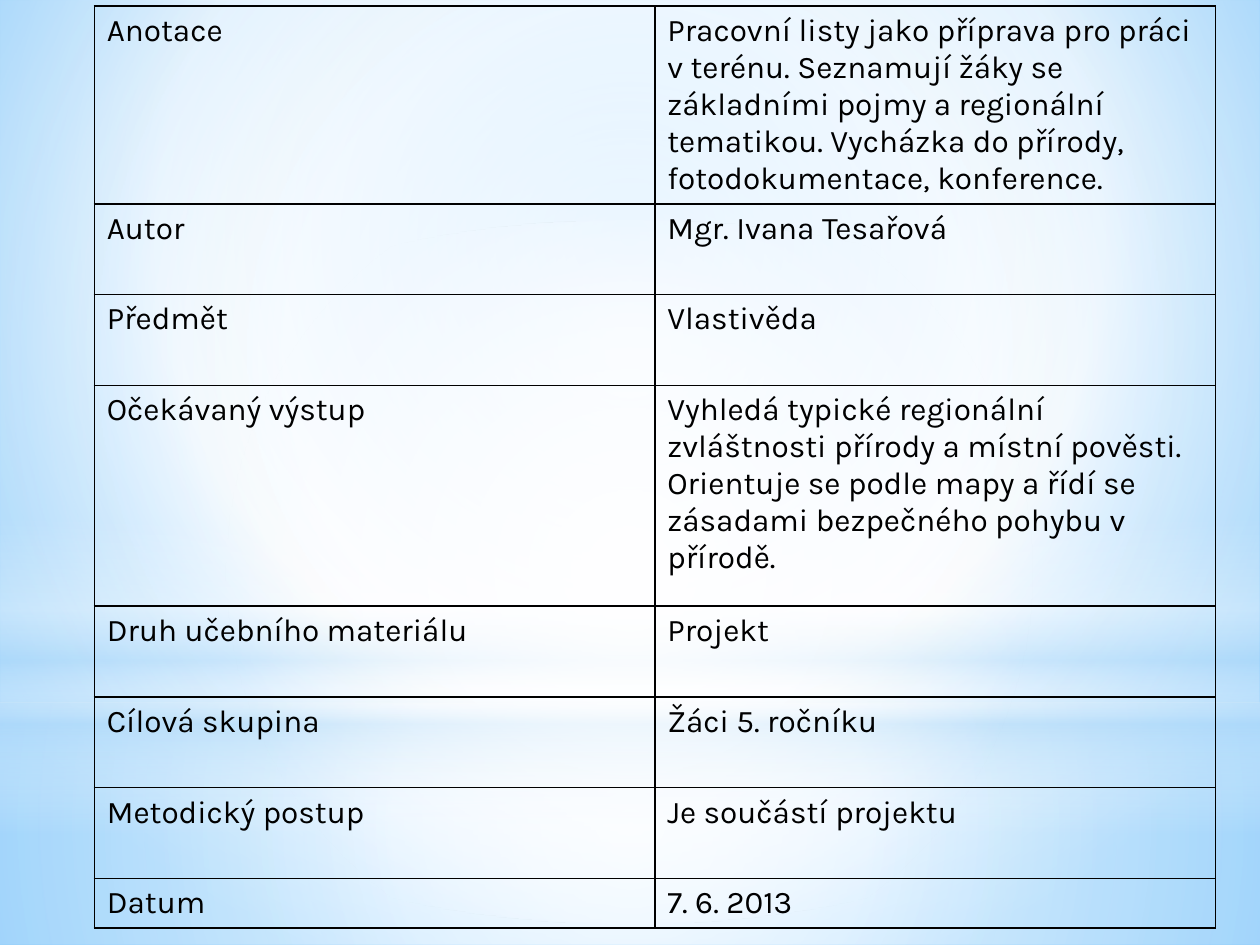
from lxml import etree
from pptx import Presentation
from pptx.dml.color import RGBColor
from pptx.enum.shapes import MSO_SHAPE
from pptx.oxml.ns import qn
from pptx.util import Cm, Pt

RECT, OVAL = MSO_SHAPE.RECTANGLE, MSO_SHAPE.OVAL
WIDE, HIGH = 25.4, 19.05
FONT, INK = "Karla", "000000"
MID = (50, 50, 50, 50)
ROWS = [
    (3.99, "Anotace", "Pracovní listy jako příprava pro práci v terénu. Seznamují žáky se "
     "základními pojmy a regionální tematikou. Vycházka do přírody, fotodokumentace, konference."),
    (1.83, "Autor", "Mgr. Ivana Tesařová"),
    (1.83, "Předmět", "Vlastivěda"),
    (4.45, "Očekávaný výstup", "Vyhledá typické regionální zvláštnosti přírody a místní pověsti. "
     "Orientuje se podle mapy a řídí se zásadami bezpečného pohybu v přírodě."),
    (1.83, "Druh učebního materiálu", "Projekt"),
    (1.83, "Cílová skupina", "Žáci 5. ročníku"),
    (1.83, "Metodický postup", "Je součástí projektu"),
    (1, "Datum", "7. 6. 2013"),
]
GLOWS = [
    (RECT, 14.17, 4.88, [(0, "FFFFFF", 91), (37, "FFFFFF", 76), (100, "B4DCFA", 79)], MID),
    (RECT, 0, 14.17, [(0, "FFFFFF", 89), (48, "FFFFFF", 62), (100, "B4DCFA", 79)], MID),
    (RECT, 10.46, 6.35, [(0, "FFFFFF", 0), (29, "FFFFFF", 30), (45, "B4DCFA", 40),
                         (55, "FFFFFF", 26), (65, "B4DCFA", 60), (100, "FFFFFF", 0)], None),
    (OVAL, 4.45, 14.17, [(0, "FFFFFF", 100), (56, "FFFFFF", 0)], MID),
]
SKY = [(0, "9ED5FF", 100), (60, "FFFFFF", 100), (100, "5BB9FF", 100)]


def rgb(code):
    """Turn a hex string into a colour."""
    return RGBColor.from_string(code)


def add(root, tag, **attrs):
    """Append a child element with the given attributes."""
    return etree.SubElement(root, qn(tag), {key: str(val) for key, val in attrs.items()})


def blend(root, stops, focus):
    """Swap a solid fill for a round gradient, or a vertical one without focus."""
    grad = etree.Element(qn("a:gradFill"), rotWithShape="1")
    items = add(grad, "a:gsLst")
    for pos, code, alpha in stops:
        tint = add(add(items, "a:gs", pos=pos * 1000), "a:srgbClr", val=code)
        if alpha < 100:
            add(tint, "a:alpha", val=alpha * 1000)
    if focus:
        sides = {side: part * 1000 for side, part in zip("ltrb", focus)}
        add(add(grad, "a:path", path="circle"), "a:fillToRect", **sides)
    else:
        add(grad, "a:lin", ang=90 * 60000, scaled=0)
    root.replace(root.find(qn("a:solidFill")), grad)


def backdrop(slide, left, top, width):
    """Paint the sky and the soft glows over it."""
    slide.background.fill.solid()
    slide.background.fill.fore_color.rgb = rgb("FFFFFF")
    blend(slide.element.find(".//" + qn("p:bgPr")), SKY, (20, 10, 20, 60))
    for kind, drop, height, stops, focus in GLOWS:
        glow = slide.shapes.add_shape(kind, Cm(left), Cm(top + drop), Cm(width), Cm(height))
        glow.shadow.inherit = False
        glow.line.fill.background()
        glow.fill.solid()
        blend(glow.element.spPr, stops, focus)


def style(cell, text):
    """Write one cell and give it a thin frame and no fill."""
    cell.text_frame.text = text
    font = cell.text_frame.paragraphs[0].runs[0].font
    font.name, font.size, font.color.rgb = FONT, Pt(18), rgb(INK)
    props = cell._tc.get_or_add_tcPr()
    for side in "LRTB":
        line = add(props, "a:ln" + side, w=Pt(1))
        add(add(line, "a:solidFill"), "a:srgbClr", val=INK)
    cell.fill.background()


def sheet(slide, left, top, width):
    """Place the table of facts."""
    height = sum(row[0] for row in ROWS)
    frame = slide.shapes.add_table(len(ROWS), 2, Cm(left), Cm(top), Cm(width), Cm(height))
    table = frame.table
    table.first_row = table.horz_banding = False
    for col in table.columns:
        col.width = Cm(width / 2)
    for num, (tall, *texts) in enumerate(ROWS):
        table.rows[num].height = Cm(tall)
        for col, text in enumerate(texts):
            style(table.cell(num, col), text)


def main():
    """Build and save the slide."""
    deck = Presentation()
    deck.slide_width, deck.slide_height = Cm(WIDE), Cm(HIGH)
    slide = deck.slides.add_slide(deck.slide_layouts[6])
    backdrop(slide, 0, 0, WIDE)
    sheet(slide, 1.9, 0.12, 22.6)
    deck.save("out.pptx")


if __name__ == "__main__":
    main()
